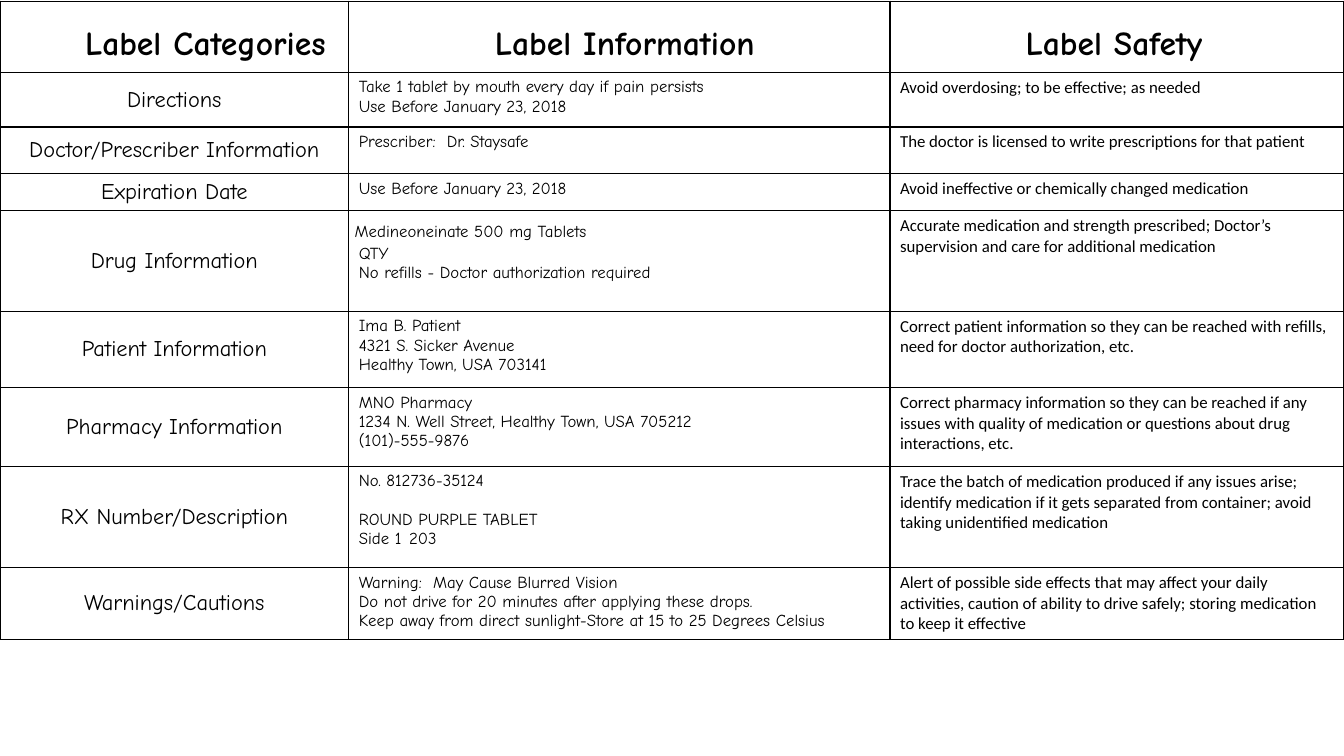
from dataclasses import dataclass

import pptx
import pptx.dml.color
import pptx.enum.text
import pptx.oxml
import pptx.oxml.ns
import pptx.util
from pptx.util import Cm, Pt

BLACK = pptx.dml.color.RGBColor(0x00, 0x00, 0x00)
WHITE = pptx.dml.color.RGBColor(0xFF, 0xFF, 0xFF)
LABEL_FONT = "Comic Neue"
SAFETY_FONT = "Calibri"
CENTER = pptx.enum.text.PP_ALIGN.CENTER
LEFT = pptx.enum.text.PP_ALIGN.LEFT
MIDDLE = pptx.enum.text.MSO_ANCHOR.MIDDLE
COLUMN_WIDTHS = (8.79, 13.64, 11.43)
HEADER_HEIGHT = 1.8


@dataclass(frozen=True)
class Category:
    name: str
    information: tuple[str, ...]
    safety: str
    height: float
    information_top: float = 0.13  # top margin of the information cell
    gap_before: int | None = None  # line that opens a new group


@dataclass(frozen=True)
class Caption:
    text: str
    left: float
    top: float
    width: float
    height: float
    size: int = 24
    bold: bool = True
    align: pptx.enum.text.PP_ALIGN = CENTER


CATEGORIES = (
    Category("Directions",
             ("Take 1 tablet by mouth every day if pain persists",
              "Use Before January 23, 2018"),
             "Avoid overdosing; to be effective; as needed", 1.37),
    Category("Doctor/Prescriber Information",
             ("Prescriber:  Dr. Staysafe",),
             "The doctor is licensed to write prescriptions for that patient", 1.18),
    Category("Expiration Date",
             ("Use Before January 23, 2018",),
             "Avoid ineffective or chemically changed medication", 0.93),
    Category("Drug Information",
             ("QTY", "No refills - Doctor authorization required"),
             "Accurate medication and strength prescribed; Doctor’s supervision "
             "and care for additional medication", 2.54, information_top=0.85),
    Category("Patient Information",
             ("Ima B. Patient", "4321 S. Sicker Avenue", "Healthy Town, USA 703141"),
             "Correct patient information so they can be reached with refills, "
             "need for doctor authorization, etc.", 1.92),
    Category("Pharmacy Information",
             ("MNO Pharmacy", "1234 N. Well Street, Healthy Town, USA 705212",
              "(101)-555-9876"),
             "Correct pharmacy information so they can be reached if any issues with "
             "quality of medication or questions about drug interactions, etc.", 1.99),
    Category("RX Number/Description",
             ("No. 812736-35124", "ROUND PURPLE TABLET", "Side 1 \t203"),
             "Trace the batch of medication produced if any issues arise; identify "
             "medication if it gets separated from container; avoid taking "
             "unidentified medication", 2.55, gap_before=1),
    Category("Warnings/Cautions",
             ("Warning:  May Cause Blurred Vision",
              "Do not drive for 20 minutes after applying these drops.",
              "Keep away from direct sunlight-Store at 15 to 25 Degrees Celsius"),
             "Alert of possible side effects that may affect your daily activities, "
             "caution of ability to drive safely; storing medication to keep it "
             "effective", 1.79),
)

CAPTIONS = (
    Caption("Label Categories", -0.03, 0.43, 10.41, 1.27),
    Caption("Label Information", 10.54, 0.43, 10.41, 1.27),
    Caption("Label Safety", 23.44, 0.43, 9.27, 1.27),
    Caption("Medineoneinate 500 mg Tablets", 8.69, 5.44, 14.1, 0.76,
            size=12, bold=False, align=LEFT),
)


def write_lines(frame, lines: tuple[str, ...], size: int, font: str,
                align: pptx.enum.text.PP_ALIGN = LEFT, bold: bool = False,
                gap_before: int | None = None) -> None:
    for index, line in enumerate(lines):
        paragraph = frame.add_paragraph() if index else frame.paragraphs[0]
        paragraph.alignment = align
        if index == gap_before:
            paragraph.space_before = Pt(13.8)
        run = paragraph.add_run()
        run.text = line
        run.font.size = Pt(size)
        run.font.name = font
        run.font.bold = bold
        run.font.color.rgb = BLACK


def style_cell(cell) -> None:
    properties = cell._tc.get_or_add_tcPr()
    for side in ("lnL", "lnR", "lnT", "lnB"):
        properties.append(pptx.oxml.parse_xml(
            f'<a:{side} {pptx.oxml.ns.nsdecls("a")} w="{Pt(1)}"><a:solidFill>'
            f'<a:srgbClr val="{BLACK}"/></a:solidFill></a:{side}>'))
    cell.fill.solid()
    cell.fill.fore_color.rgb = WHITE


def add_label_table(slide) -> None:
    heights = [HEADER_HEIGHT] + [category.height for category in CATEGORIES]
    table = slide.shapes.add_table(
        len(heights), len(COLUMN_WIDTHS), Cm(0), Cm(0.03),
        Cm(sum(COLUMN_WIDTHS)), Cm(sum(heights))).table
    table.first_row = False
    table.horz_banding = False
    for column, width in zip(table.columns, COLUMN_WIDTHS):
        column.width = Cm(width)
    for row, height in zip(table.rows, heights):
        row.height = Cm(height)
    for cell in table.iter_cells():
        style_cell(cell)

    # Header row stays empty: its captions are placed over it
    for number, category in enumerate(CATEGORIES, start=1):
        name, information, safety = table.rows[number].cells
        name.vertical_anchor = MIDDLE
        information.margin_top = Cm(category.information_top)
        write_lines(name.text_frame, (category.name,), 16, LABEL_FONT, CENTER)
        write_lines(information.text_frame, category.information, 12, LABEL_FONT,
                    gap_before=category.gap_before)
        write_lines(safety.text_frame, (category.safety,), 12, SAFETY_FONT)


def add_caption(slide, caption: Caption) -> None:
    frame = slide.shapes.add_textbox(
        Cm(caption.left), Cm(caption.top),
        Cm(caption.width), Cm(caption.height)).text_frame
    frame.word_wrap = True
    write_lines(frame, (caption.text,), caption.size, LABEL_FONT,
                caption.align, caption.bold)


def main() -> None:
    presentation = pptx.Presentation()
    presentation.slide_width = Cm(33.87)
    presentation.slide_height = Cm(19.05)
    slide = presentation.slides.add_slide(presentation.slide_layouts[6])

    # Table of label parts
    add_label_table(slide)

    # Column captions and drug name
    for caption in CAPTIONS:
        add_caption(slide, caption)

    presentation.save("out.pptx")


if __name__ == "__main__":
    main()
